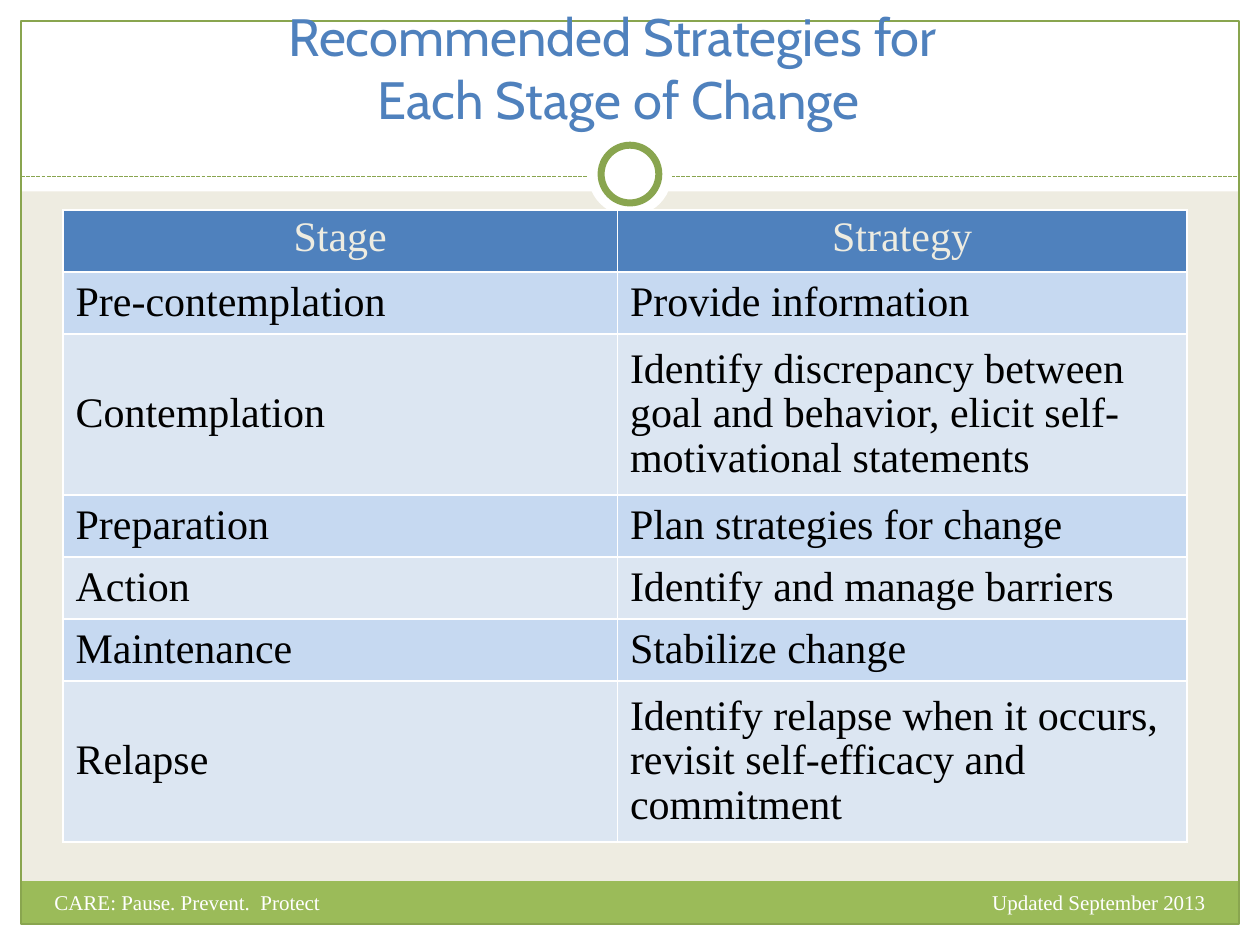
from lxml import etree
from pptx import Presentation
from pptx.dml.color import RGBColor
from pptx.enum.dml import MSO_LINE
from pptx.enum.shapes import MSO_CONNECTOR, MSO_SHAPE
from pptx.enum.text import MSO_ANCHOR, PP_ALIGN
from pptx.oxml.ns import qn
from pptx.util import Pt

RECTANGLE, OVAL = MSO_SHAPE.RECTANGLE, MSO_SHAPE.OVAL
LEFT, CENTER, RIGHT = PP_ALIGN.LEFT, PP_ALIGN.CENTER, PP_ALIGN.RIGHT
WHITE, CREAM, BLACK = "FFFFFF", "EEECE1", "000000"
GREEN, DARK_GREEN, BLUE = "9BBB59", "89A54F", "4F81BD"
BAND_FILLS = ("C6D9F1", "DCE6F2")
SERIF = "Times New Roman"

TITLE = "Recommended Strategies for \vEach Stage of Change"
ROWS = [
    ("Stage", "Strategy"),
    ("Pre-contemplation", "Provide information"),
    ("Contemplation", "Identify discrepancy between goal and behavior, "
                      "elicit self-motivational statements"),
    ("Preparation", "Plan strategies for change"),
    ("Action", "Identify and manage barriers"),
    ("Maintenance", "Stabilize change"),
    ("Relapse", "Identify relapse when it occurs, revisit self-efficacy and commitment"),
]
TALL_ROWS = ("Contemplation", "Relapse")
ROW_HEIGHT, TALL_HEIGHT = 35.4, 92.2
COLUMN_WIDTHS = (316.8, 325.4)
FOOTERS = [
    ("Updated September 2013", 456, 240, RIGHT),
    ("CARE: Pause. Prevent.  Protect", 24, 360, LEFT),
]

WIDTH, HEIGHT, MARGIN = 720, 540, 12
INNER_WIDTH = WIDTH - 2 * MARGIN
RULE_Y = 101
# left, top, width, height, fill
PANELS = [
    (0, HEIGHT - MARGIN, WIDTH, MARGIN, WHITE),
    (0, 0, WIDTH, 109.4, WHITE),
    (0, 0, MARGIN, HEIGHT, WHITE),
    (WIDTH - MARGIN, 0, MARGIN, HEIGHT, WHITE),
    (MARGIN, 503.5, INNER_WIDTH, 24.5, GREEN),
]


def color(hex_string):
    return RGBColor.from_string(hex_string)


def add_shape(slide, kind, box, fill=None, line=None, line_width=0.75):
    shape = slide.shapes.add_shape(kind, *map(Pt, box))
    shape.shadow.inherit = False
    if fill:
        shape.fill.solid()
        shape.fill.fore_color.rgb = color(fill)
    else:
        shape.fill.background()
    if line:
        shape.line.color.rgb = color(line)
        shape.line.width = Pt(line_width)
    else:
        shape.line.fill.background()


def format_text(text_frame, font_name, size, font_color, alignment):
    for paragraph in text_frame.paragraphs:
        paragraph.alignment = alignment
        for run in paragraph.runs:
            run.font.name = font_name
            run.font.size = Pt(size)
            run.font.color.rgb = color(font_color)


def set_borders(cell, hex_string, width):
    properties = cell._tc.get_or_add_tcPr()
    for index, side in enumerate(("lnL", "lnR", "lnT", "lnB")):
        border = etree.Element(qn(f"a:{side}"), w=str(Pt(width)))
        fill = etree.SubElement(border, qn("a:solidFill"))
        etree.SubElement(fill, qn("a:srgbClr"), val=hex_string)
        properties.insert(index, border)


def add_frame(slide):
    for *box, fill in PANELS:
        add_shape(slide, RECTANGLE, box, fill)
    add_shape(slide, RECTANGLE, (MARGIN, MARGIN, INNER_WIDTH, HEIGHT - 2 * MARGIN),
              line=DARK_GREEN)
    rule = slide.shapes.add_connector(
        MSO_CONNECTOR.STRAIGHT, Pt(MARGIN), Pt(RULE_Y), Pt(WIDTH - MARGIN), Pt(RULE_Y))
    rule.line.color.rgb = color(DARK_GREEN)
    rule.line.width = Pt(0.75)
    rule.line.dash_style = MSO_LINE.SQUARE_DOT
    etree.SubElement(rule._element.spPr, qn("a:effectLst"))
    for diameter, line in ((48, None), (33, DARK_GREEN)):
        box = ((WIDTH - diameter) / 2, 99.5 - diameter / 2, diameter, diameter)
        add_shape(slide, OVAL, box, WHITE, line, 4)


def add_title(slide):
    title = slide.shapes.title
    title.left, title.top, title.width, title.height = map(Pt, (18, 18, 671, 60))
    title.text_frame.text = TITLE
    title.text_frame.vertical_anchor = MSO_ANCHOR.BOTTOM
    format_text(title.text_frame, "Cabin", 30, BLUE, CENTER)
    slide.shapes._spTree.append(title._element)  # bring in front of the panels


def add_strategy_table(slide):
    heights = [TALL_HEIGHT if row[0] in TALL_ROWS else ROW_HEIGHT for row in ROWS]
    table = slide.shapes.add_table(
        len(ROWS), len(COLUMN_WIDTHS), Pt(36), Pt(120),
        Pt(sum(COLUMN_WIDTHS)), Pt(sum(heights))).table
    table.first_row = table.horz_banding = False
    for column, width in zip(table.columns, COLUMN_WIDTHS):
        column.width = Pt(width)
    for index, (texts, height) in enumerate(zip(ROWS, heights)):
        header = index == 0
        table.rows[index].height = Pt(height)
        for cell, text in zip(table.rows[index].cells, texts):
            cell.text_frame.text = text
            cell.text_frame.paragraphs[0].line_spacing = 0.96
            format_text(cell.text_frame, SERIF, 24, CREAM if header else BLACK,
                        CENTER if header else LEFT)
            cell.vertical_anchor = MSO_ANCHOR.TOP if header else MSO_ANCHOR.MIDDLE
            cell.fill.solid()
            cell.fill.fore_color.rgb = color(BLUE if header else BAND_FILLS[(index - 1) % 2])
            set_borders(cell, WHITE, 1)


def add_footers(slide):
    for text, left, width, alignment in FOOTERS:
        box = slide.shapes.add_textbox(Pt(left), Pt(504.7), Pt(width), Pt(28.8))
        box.text_frame.word_wrap = True
        box.text_frame.text = text
        format_text(box.text_frame, SERIF, 12, WHITE, alignment)


def main():
    presentation = Presentation()
    presentation.slide_width, presentation.slide_height = Pt(WIDTH), Pt(HEIGHT)
    slide = presentation.slides.add_slide(presentation.slide_layouts[5])
    slide.background.fill.solid()
    slide.background.fill.fore_color.rgb = color(CREAM)
    add_frame(slide)
    add_title(slide)
    add_strategy_table(slide)
    add_footers(slide)
    presentation.save("out.pptx")


if __name__ == "__main__":
    main()
